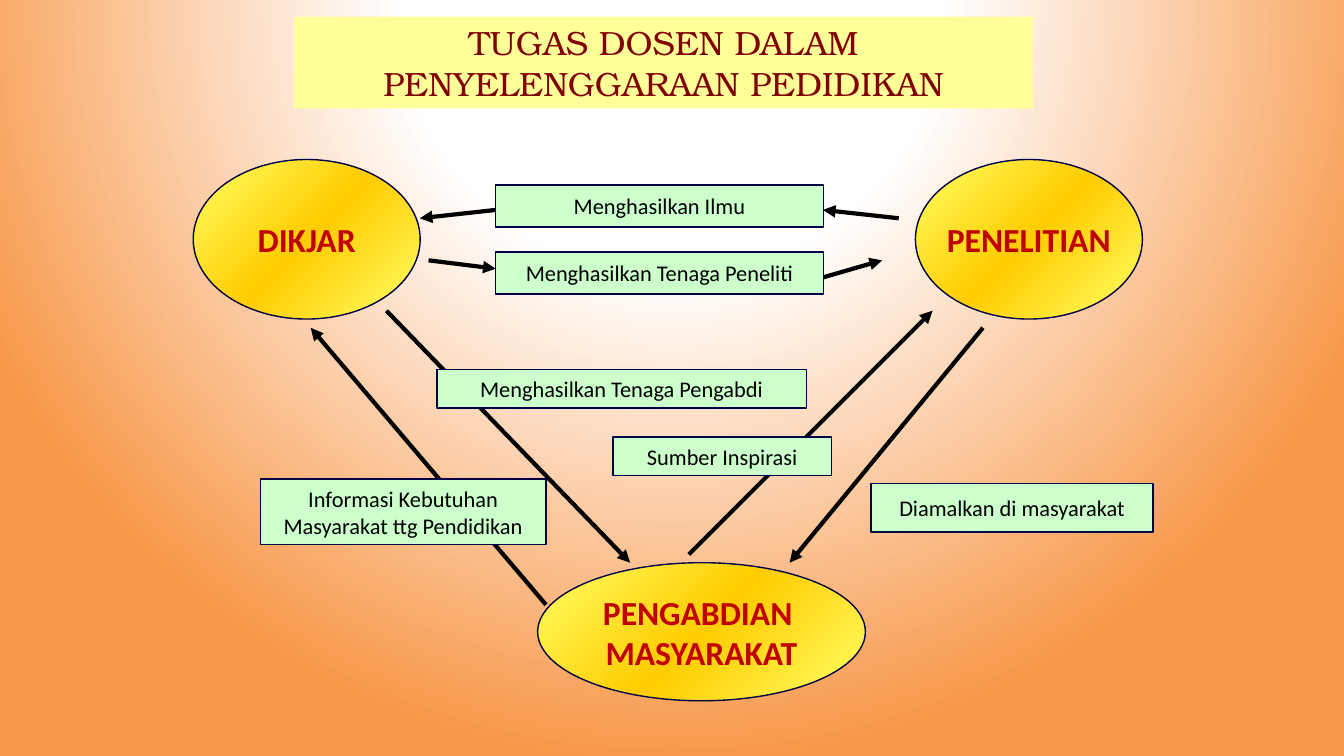
import lxml.etree
import pptx
import pptx.dml.color
import pptx.enum.shapes
import pptx.enum.text
import pptx.oxml.ns
import pptx.util

Cm = pptx.util.Cm
Pt = pptx.util.Pt
RGBColor = pptx.dml.color.RGBColor
SHAPE = pptx.enum.shapes.MSO_SHAPE
qn = pptx.oxml.ns.qn

WHITE = RGBColor(0xFF, 0xFF, 0xFF)
BLACK = RGBColor(0x00, 0x00, 0x00)
ORANGE = RGBColor(0xF7, 0x96, 0x46)
YELLOW = RGBColor(0xFF, 0xFF, 0x66)
GOLD = RGBColor(0xFF, 0xCC, 0x00)
PALE_YELLOW = RGBColor(0xFF, 0xFF, 0x99)
MINT = RGBColor(0xCC, 0xFF, 0xCC)
NAVY = RGBColor(0x00, 0x00, 0x46)
RED = RGBColor(0xC0, 0x00, 0x00)
MAROON = RGBColor(0x80, 0x00, 0x00)


def write_text(shape, text, size=16, font="Calibri", color=BLACK, bold=False, wrap=True):
    frame = shape.text_frame
    frame.word_wrap = wrap
    frame.vertical_anchor = pptx.enum.text.MSO_ANCHOR.MIDDLE
    para = frame.paragraphs[0]
    para.alignment = pptx.enum.text.PP_ALIGN.CENTER
    para.text = text
    for span in para.runs:
        span.font.size = Pt(size)
        span.font.name = font
        span.font.bold = bold
        span.font.color.rgb = color


def set_gradient(fill, parent, stops):
    """Swap the fill inside parent for a gradient and return its element."""
    fill.solid()
    solid = parent.find(qn("a:solidFill"))
    gradient = lxml.etree.Element(qn("a:gradFill"), rotWithShape="1")
    stop_list = lxml.etree.SubElement(gradient, qn("a:gsLst"))
    for percent, color in stops:
        stop = lxml.etree.SubElement(stop_list, qn("a:gs"), pos=str(percent * 1000))
        lxml.etree.SubElement(stop, qn("a:srgbClr"), val=str(color))
    parent.replace(solid, gradient)
    return gradient


class Diagram:
    def __init__(self, page):
        self.page = page

    def background(self):
        fill = self.page.background.fill
        fill.solid()
        holder = self.page.element.find(".//" + qn("p:bgPr"))
        gradient = set_gradient(fill, holder, [(0, WHITE), (35, WHITE), (100, ORANGE)])
        circle = lxml.etree.SubElement(gradient, qn("a:path"), path="circle")
        lxml.etree.SubElement(circle, qn("a:fillToRect"),
                              l="50000", t="-80000", r="50000", b="180000")

    def outline(self, kind, left, top, width, height):
        shape = self.page.shapes.add_shape(kind, Cm(left), Cm(top), Cm(width), Cm(height))
        shape.shadow.inherit = False
        shape.line.color.rgb = NAVY
        shape.line.width = Pt(1)
        return shape

    def duty(self, text, *place):
        """Draw a golden ellipse for one of the three duties."""
        shape = self.outline(SHAPE.OVAL, *place)
        gradient = set_gradient(shape.fill, shape.element.spPr,
                                [(0, YELLOW), (50, GOLD), (100, YELLOW)])
        lxml.etree.SubElement(gradient, qn("a:lin"), ang="2700000", scaled="1")
        write_text(shape, text, size=24, color=RED, bold=True, wrap=False)

    def label(self, text, *place, wrap=False):
        shape = self.outline(SHAPE.RECTANGLE, *place)
        shape.fill.solid()
        shape.fill.fore_color.rgb = MINT
        write_text(shape, text, wrap=wrap)

    def title(self, text, *place):
        shape = self.outline(SHAPE.RECTANGLE, *place)
        shape.fill.solid()
        shape.fill.fore_color.rgb = PALE_YELLOW
        shape.line.fill.background()
        write_text(shape, text, size=24, font="TeX Gyre Bonum", color=MAROON)

    def arrow(self, *ends):
        line = self.page.shapes.add_connector(
            pptx.enum.shapes.MSO_CONNECTOR.STRAIGHT, *[Cm(value) for value in ends])
        line.line.color.rgb = BLACK
        line.line.width = Pt(3)
        lxml.etree.SubElement(line.line._get_or_add_ln(), qn("a:tailEnd"), type="triangle")
        lxml.etree.SubElement(line.element.spPr, qn("a:effectLst"))


def main():
    deck = pptx.Presentation()
    deck.slide_width, deck.slide_height = Cm(33.87), Cm(19.05)
    diagram = Diagram(deck.slides.add_slide(deck.slide_layouts[6]))
    diagram.background()

    diagram.duty("DIKJAR", 4.87, 4.02, 5.72, 4.02)
    diagram.duty("PENELITIAN", 23.07, 4.02, 5.72, 4.02)
    diagram.duty("PENGABDIAN \vMASYARAKAT", 13.55, 14.18, 8.26, 3.48)

    for ends in [
        (22.65, 5.5, 20.74, 5.29),    # Penelitian to Dikjar
        (12.49, 5.29, 10.58, 5.5),
        (10.8, 6.56, 12.49, 6.77),    # Dikjar to Penelitian
        (20.74, 6.99, 22.23, 6.56),
        (17.36, 13.97, 23.5, 7.83),   # Pengabdian to Penelitian
        (24.77, 8.26, 19.9, 14.18),   # Penelitian to Pengabdian
        (13.76, 15.24, 7.83, 8.26),   # Pengabdian to Dikjar
        (9.74, 7.83, 15.88, 14.18),   # Dikjar to Pengabdian
    ]:
        diagram.arrow(*ends)

    diagram.label("Menghasilkan Ilmu", 12.49, 4.66, 8.26, 1.06)
    diagram.label("Menghasilkan Tenaga Peneliti", 12.49, 6.35, 8.26, 1.06)
    diagram.label("Diamalkan di masyarakat", 21.95, 12.19, 7.11, 1.22)
    diagram.label("Menghasilkan Tenaga Pengabdi", 11.01, 9.31, 9.31, 0.97)
    diagram.label("Informasi Kebutuhan Masyarakat ttg Pendidikan",
                  6.56, 12.07, 7.2, 1.65, wrap=True)
    diagram.label("Sumber Inspirasi", 15.45, 11.01, 5.5, 0.97)

    diagram.title("TUGAS DOSEN DALAM PENYELENGGARAAN PEDIDIKAN", 7.41, 0.42, 18.63, 2.31)
    deck.save("out.pptx")


if __name__ == "__main__":
    main()
